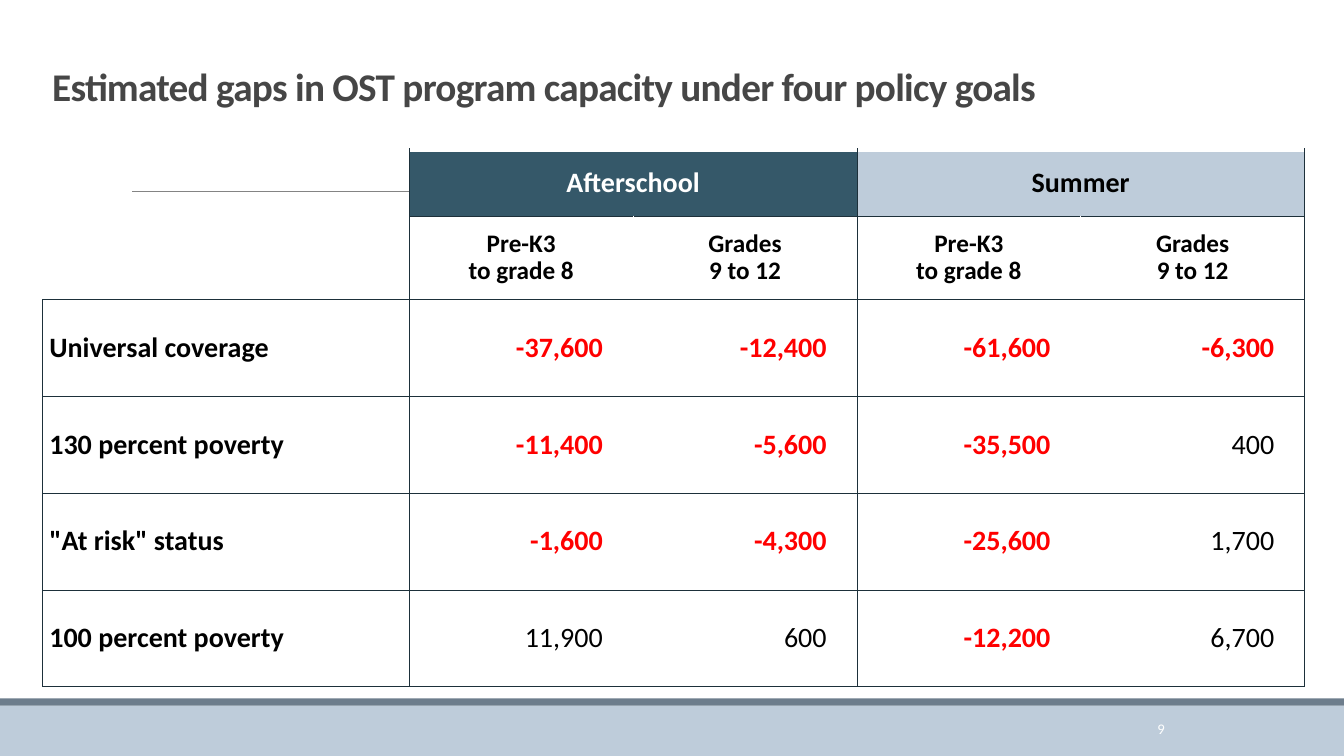
from lxml.etree import SubElement
from pptx import Presentation
from pptx.dml.color import RGBColor
from pptx.enum.shapes import MSO_CONNECTOR, MSO_SHAPE
from pptx.enum.text import MSO_ANCHOR, PP_ALIGN
from pptx.oxml.ns import qn
from pptx.util import Inches, Pt

WHITE = RGBColor(0xFF, 0xFF, 0xFF)
BLACK = RGBColor(0, 0, 0)
RED = RGBColor(0xFF, 0, 0)
TITLE_GRAY = RGBColor(0x46, 0x46, 0x46)
RULE_GRAY = RGBColor(0x84, 0x84, 0x84)
BAND_GRAY = RGBColor(0x6D, 0x7D, 0x8C)
PALE_BLUE = RGBColor(0xBE, 0xCC, 0xDA)
TEAL = RGBColor(0x35, 0x58, 0x69)
GRID_DARK = RGBColor(0x1D, 0x30, 0x3A)

COLUMN_WIDTHS = [3.64] + [2.22] * 4
ROW_HEIGHTS = [0.35, 0.65, 0.83] + [0.96] * 4
SEASONS = [("Afterschool", TEAL, WHITE), ("Summer", PALE_BLUE, BLACK)]
GRADE_BANDS = ["Pre-K3\nto grade 8", "Grades\n9 to 12"] * 2
GAPS = [
    ("Universal coverage", "-37,600", "-12,400", "-61,600", "-6,300"),
    ("130 percent poverty", "-11,400", "-5,600", "-35,500", "400"),
    ('"At risk" status', "-1,600", "-4,300", "-25,600", "1,700"),
    ("100 percent poverty", "11,900", "600", "-12,200", "6,700"),
]


def white_edges(row, column):
    """Return the white edges of a table cell with their widths in points."""
    if row == 0:
        return {"L": 1, "R": 1, "T": 1, "B": 3}
    if column == 0 and row <= 2:
        return {"L": 1, "T": 1, "B": 1} if row == 1 else {"L": 1, "T": 1}
    if column > 0 and row >= 2:
        return {"R": 1} if column % 2 else {"L": 1}
    return {}


class SlideBuilder:
    """Holds the text style and the current slide."""

    def __init__(self, slide, font_name):
        self.slide = slide
        self.font_name = font_name

    def style(self, paragraph, size, color, bold=False, align=PP_ALIGN.LEFT, spacing=1.0):
        """Apply font and alignment to a paragraph."""
        paragraph.alignment = align
        paragraph.line_spacing = spacing
        font = paragraph.font
        font.name = self.font_name
        font.size = Pt(size)
        font.bold = bold
        font.color.rgb = color

    def band(self, top, height, color):
        """Add a full-width rectangle."""
        shape = self.slide.shapes.add_shape(
            MSO_SHAPE.RECTANGLE, 0, Inches(top), Inches(13.33), Inches(height))
        shape.shadow.inherit = False
        shape.fill.solid()
        shape.fill.fore_color.rgb = color
        shape.line.fill.background()

    def rule(self, left, right, y, color):
        """Add a thin horizontal line."""
        connector = self.slide.shapes.add_connector(
            MSO_CONNECTOR.STRAIGHT, Inches(left), Inches(y), Inches(right), Inches(y))
        connector.line.color.rgb = color
        connector.line.width = Pt(0.5)
        SubElement(connector._element.spPr, qn("a:effectLst"))

    def text(self, content, left, top, width, height, anchor, tracking=0, **style):
        """Add a one-paragraph text box."""
        box = self.slide.shapes.add_textbox(
            Inches(left), Inches(top), Inches(width), Inches(height))
        frame = box.text_frame
        frame.word_wrap = True
        frame.vertical_anchor = anchor
        paragraph = frame.paragraphs[0]
        paragraph.text = content
        self.style(paragraph, **style)
        if tracking:
            paragraph.runs[0].font._element.set("spc", str(round(tracking * 100)))

    def table(self, left, top):
        """Add an empty table with its grid of borders."""
        frame = self.slide.shapes.add_table(
            len(ROW_HEIGHTS), len(COLUMN_WIDTHS), Inches(left), Inches(top),
            Inches(sum(COLUMN_WIDTHS)), Inches(sum(ROW_HEIGHTS)))
        table = frame.table
        table.first_row = table.horz_banding = False
        for column, width in zip(table.columns, COLUMN_WIDTHS):
            column.width = Inches(width)
        for row_index, height in enumerate(ROW_HEIGHTS):
            table.rows[row_index].height = Inches(height)
            for column_index in range(len(COLUMN_WIDTHS)):
                cell = table.cell(row_index, column_index)
                self.borders(cell, white_edges(row_index, column_index))
                cell.margin_top = cell.margin_bottom = 0
                cell.fill.background()
        return table

    def borders(self, cell, white):
        """Draw the four borders of a cell."""
        properties = cell._tc.get_or_add_tcPr()
        for side in "LRTB":
            width = Pt(white.get(side, 0.25))
            line = SubElement(properties, qn(f"a:ln{side}"), w=str(width))
            fill = SubElement(line, qn("a:solidFill"))
            color = WHITE if side in white else GRID_DARK
            SubElement(fill, qn("a:srgbClr"), val=str(color))

    def cell(self, cell, content, inset=(0.07, 0), fill=None, **style):
        """Fill in one table cell."""
        cell.margin_left = cell.margin_right = Inches(inset[0])
        cell.margin_top = cell.margin_bottom = Inches(inset[1])
        cell.vertical_anchor = MSO_ANCHOR.MIDDLE
        if fill is not None:
            cell.fill.solid()
            cell.fill.fore_color.rgb = fill
        paragraph = cell.text_frame.paragraphs[0]
        paragraph.text = content
        self.style(paragraph, **style)


def main():
    """Build and save the slide."""
    presentation = Presentation()
    presentation.slide_width = Inches(13.33)
    presentation.slide_height = Inches(7.5)
    slide = presentation.slides.add_slide(presentation.slide_layouts[6])
    builder = SlideBuilder(slide, "Calibri")

    builder.band(7, 0.5, PALE_BLUE)
    builder.band(6.93, 0.07, BAND_GRAY)
    builder.rule(1.31, 12.21, 1.9, RULE_GRAY)
    builder.text("Estimated gaps in OST program capacity under four policy goals",
                 0.42, 0.4, 12, 0.74, MSO_ANCHOR.BOTTOM, tracking=-0.5,
                 size=28, color=TITLE_GRAY, bold=True, spacing=0.85)

    table = builder.table(0.42, 1.14)
    table.cell(0, 0).merge(table.cell(0, 4))
    for index, (season, fill, color) in enumerate(SEASONS):
        column = 1 + 2 * index
        table.cell(1, column).merge(table.cell(1, column + 1))
        builder.cell(table.cell(1, column), season, fill=fill, size=20,
                     color=color, bold=True, align=PP_ALIGN.CENTER)
    for column, grades in enumerate(GRADE_BANDS, start=1):
        builder.cell(table.cell(2, column), grades, size=18, color=BLACK,
                     bold=True, align=PP_ALIGN.CENTER, spacing=0.9)
    for row, (goal, *values) in enumerate(GAPS, start=3):
        builder.cell(table.cell(row, 0), goal, size=20, color=BLACK, bold=True)
        for column, value in enumerate(values, start=1):
            shortfall = value.startswith("-")
            builder.cell(table.cell(row, column), value, inset=(0.3, 0.2), size=20,
                         color=RED if shortfall else BLACK, bold=shortfall,
                         align=PP_ALIGN.RIGHT)

    builder.text("9", 10.22, 7.03, 1.43, 0.4, MSO_ANCHOR.MIDDLE,
                 size=10.5, color=WHITE, align=PP_ALIGN.RIGHT)
    presentation.save("out.pptx")


if __name__ == "__main__":
    main()
